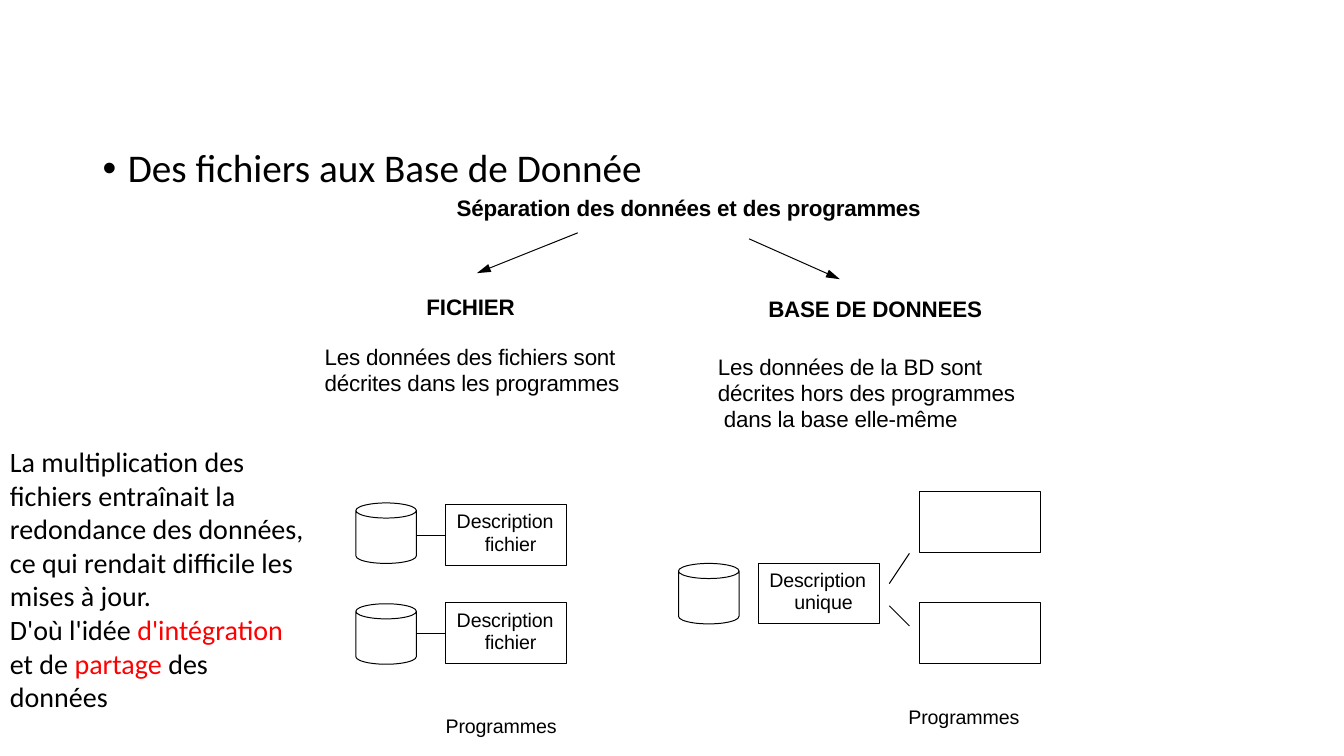
from itertools import cycle

from lxml.etree import SubElement
from pptx import Presentation
from pptx.dml.color import RGBColor
from pptx.enum.shapes import MSO_CONNECTOR, MSO_SHAPE
from pptx.enum.text import MSO_ANCHOR, PP_ALIGN
from pptx.oxml.ns import qn
from pptx.util import Pt

PX = 9144
COLORS = {"ink": "000000", "red": "FF0000"}


def scale(*sizes):
    """Turn px lengths into EMU."""
    return [size * PX for size in sizes]


def tint(name):
    """Return a named colour."""
    return RGBColor.from_string(COLORS[name])


def write(shape, text, font="Arial", size=16, bold=False, track=-10, inset=(0, 1, 0, 0),
          left=1, hang=0, lead=None, before=0, bullet=None):
    """Fill a shape with text; stars enclose red words and \\v breaks a line."""
    frame = shape.text_frame
    frame.word_wrap = True
    frame.vertical_anchor = MSO_ANCHOR.TOP
    frame.margin_left, frame.margin_top, frame.margin_right, frame.margin_bottom = scale(*inset)
    for rank, words in enumerate(text.split("\n")):
        para = frame.add_paragraph() if rank else frame.paragraphs[0]
        para.alignment = PP_ALIGN.LEFT
        para.space_before = Pt(before)
        if lead:
            para.line_spacing = lead
        props = para._p.get_or_add_pPr()
        props.set("marL", str(left * PX))
        props.set("indent", str(-hang * PX))
        if bullet:
            SubElement(props, qn("a:buFont")).set("typeface", "Arial")
            SubElement(props, qn("a:buChar")).set("char", bullet)
        for part, color in zip(words.split("*"), cycle(("ink", "red"))):
            for row, piece in enumerate(part.split("\v")):
                if row:
                    para.add_line_break()
                run = para.add_run()
                run.text = piece
                run.font.name, run.font.size, run.font.bold = font, Pt(size), bold
                run.font.color.rgb = tint(color)
                run._r.get_or_add_rPr().set("spc", str(track))


def label(slide, place, text, **style):
    """Add a text box."""
    write(slide.shapes.add_textbox(*scale(*place)), text, **style)


def outline(slide, kind, place):
    """Add a hollow shape with a thin line."""
    shape = slide.shapes.add_shape(kind, *scale(*place))
    shape.shadow.inherit = False
    shape.fill.background()
    shape.line.color.rgb = tint("ink")
    shape.line.width = Pt(0.72)
    return shape


def box(slide, x, y, text="", **style):
    """Add a program box."""
    shape = outline(slide, MSO_SHAPE.RECTANGLE, (x, y, 120, 60))
    if text:
        write(shape, text, size=14, **style)
    return shape


def drum(slide, x, y):
    """Add a data drum."""
    outline(slide, MSO_SHAPE.CAN, (x, y, 60, 60))


def link(slide, ends, arrow=False, goal=None):
    """Add a line, with an arrowhead or joined to the left of a box."""
    line = slide.shapes.add_connector(MSO_CONNECTOR.STRAIGHT, *scale(*ends))
    line.line.color.rgb = tint("ink")
    line.line.width = Pt(0.72)
    if arrow:
        head = SubElement(line.line._get_or_add_ln(), qn("a:tailEnd"))
        for key, value in (("type", "triangle"), ("w", "med"), ("len", "lg")):
            head.set(key, value)
    SubElement(line._element.spPr, qn("a:effectLst"))
    if goal is not None:
        line.end_connect(goal, 1)


def main():
    """Build the slide."""
    deck = Presentation()
    deck.slide_width, deck.slide_height = scale(1333, 750)
    slide = deck.slides.add_slide(deck.slide_layouts[6])

    label(slide, (92, 143, 1150, 532), "Des fichiers aux Base de Donnée", font="Calibri",
          size=28, track=0, inset=(10, 5, 10, 5), left=25, hang=25, lead=0.9,
          before=10, bullet="•")
    for place, text in (
        ((452, 192, 471, 30), "Séparation des données et des programmes"),
        ((761, 292, 218, 30), "BASE DE DONNEES"),
        ((422, 290, 92, 30), "FICHIER"),
    ):
        label(slide, place, text, bold=True, before=1)
    for place, text in (
        ((711, 348, 303, 81),
         "Les données de la BD sont\vdécrites hors des programmes\v dans la base elle-même"),
        ((321, 338, 300, 55), "Les données des fichiers sont\vdécrites dans les programmes"),
    ):
        label(slide, place, text, inset=(0, 3, 0, 0), lead=Pt(18.5), before=2.2)
    for x, y in ((441, 707), (900, 698)):
        label(slide, (x, y, 114, 26), "Programmes", size=14, before=0.9)

    for ends in ((573, 231, 473, 271), (743, 237, 833, 277)):
        link(slide, ends, arrow=True)

    for y, top, lead, before in ((501, 5, 16.1, 3.8), (598, 7, 15.5, 4.8)):
        goal = box(slide, 442, y, "Description\vfichier", inset=(0, top, 0, 0),
                   left=39, hang=28, lead=Pt(lead), before=before)
        link(slide, (413, y + 30, 442, y + 30), goal=goal)
    for y in (499, 599):
        drum(slide, 353, y)

    drum(slide, 673, 559)
    box(slide, 752, 559, "Description\vunique", inset=(0, 5, 0, 0),
        left=36, hang=25, lead=Pt(16.1), before=3.9)
    for y in (488, 598):
        box(slide, 912, y)
    for start, end in ((579, 549), (601, 621)):
        link(slide, (882, start, 902, end))

    label(slide, (0, 436, 319, 279),
          "La multiplication des fichiers entraînait la redondance des données, "
          "ce qui rendait difficile les mises à jour.\n"
          "D'où l'idée *d'intégration* et de *partage* des données",
          font="Calibri", size=20, track=0, inset=(10, 5, 10, 5), left=0)
    deck.save("out.pptx")


if __name__ == "__main__":
    main()
